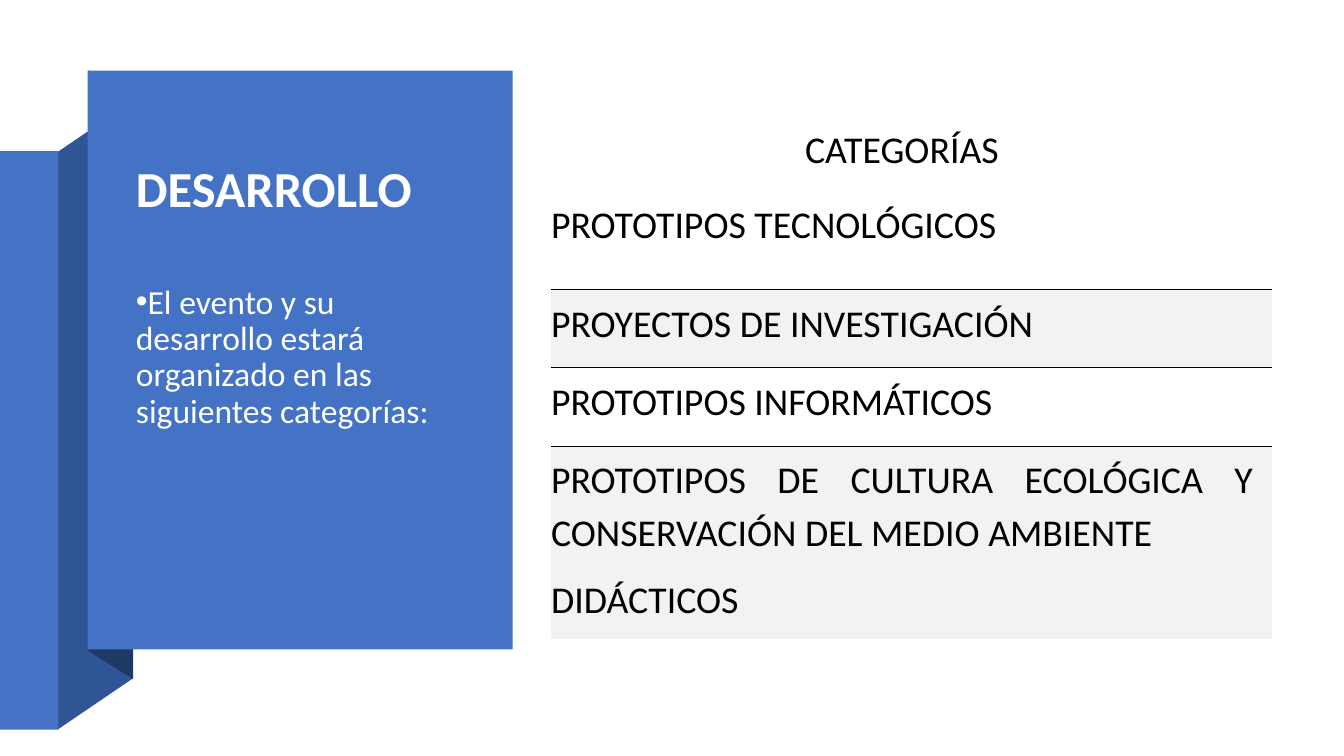
import lxml.etree
import pptx
import pptx.dml.color
import pptx.enum.shapes
import pptx.enum.text
import pptx.oxml
import pptx.oxml.ns
import pptx.util

Pt = pptx.util.Pt
ALIGN = pptx.enum.text.PP_ALIGN
ANCHOR = pptx.enum.text.MSO_ANCHOR
NO_STYLE = "{2D5ABB26-0587-4C30-8999-92F81FD0307C}"
COLORS = {
    "blue": "4472C4",
    "side": "2F5597",
    "fold": "203864",
    "band": "F2F2F2",
    "white": "FFFFFF",
    "body": "FEFFFF",
    "black": "000000",
}
CATEGORIES = [
    (54.7, ["CATEGORÍAS"]),
    (70.6, ["PROTOTIPOS TECNOLÓGICOS"]),
    (56, ["PROYECTOS DE INVESTIGACIÓN"]),
    (56, ["PROTOTIPOS INFORMÁTICOS"]),
    (131, ["PROTOTIPOS DE CULTURA ECOLÓGICA Y CONSERVACIÓN DEL MEDIO AMBIENTE",
           "DIDÁCTICOS"]),
]


def rgb(name):
    """Return the named colour."""
    return pptx.dml.color.RGBColor.from_string(COLORS[name])


def apply(target, values):
    """Set every attribute in values on the target."""
    for name, value in values.items():
        setattr(target, name, value)


def paint(shape, color):
    """Give a shape a flat fill with no line or shadow."""
    shape.shadow.inherit = False
    shape.fill.solid()
    shape.fill.fore_color.rgb = rgb(color)
    shape.line.fill.background()


def add_panel(page, left, top, width, height, color):
    """Draw a flat rectangle."""
    kind = pptx.enum.shapes.MSO_SHAPE.RECTANGLE
    paint(page.shapes.add_shape(kind, Pt(left), Pt(top), Pt(width), Pt(height)), color)


def add_fold(page, corners, color):
    """Draw a closed ribbon side through the corners."""
    points = [(Pt(x), Pt(y)) for x, y in corners]
    builder = page.shapes.build_freeform(*points[0], scale=1.0)
    builder.add_line_segments(points[1:], close=True)
    paint(builder.convert_to_shape(), color)


def write(para, text, color, font, layout):
    """Fill a paragraph with one formatted span."""
    apply(para, layout)
    span = para.add_run()
    span.text = text
    apply(span.font, {"name": "Calibri", **font})
    span.font.color.rgb = rgb(color)


def add_text(page, left, top, width, height, anchor):
    """Add a wrapping text box and return its first paragraph."""
    box = page.shapes.add_textbox(Pt(left), Pt(top), Pt(width), Pt(height))
    apply(box.text_frame, {"word_wrap": True, "vertical_anchor": anchor})
    return box.text_frame.paragraphs[0]


def add_bullet(para):
    """Give a paragraph a hanging round bullet."""
    properties = para._p.get_or_add_pPr()
    properties.set("marL", "0")
    properties.set("indent", str(Pt(-18)))
    for tag, key, value in (("a:buFont", "typeface", "Arial"), ("a:buChar", "char", "•")):
        bullet = lxml.etree.SubElement(properties, pptx.oxml.ns.qn(tag))
        bullet.set(key, value)


def add_rule(cell, side):
    """Draw a thin black border on one side of a cell."""
    rule = pptx.oxml.parse_xml(
        f'<a:{side} {pptx.oxml.ns.nsdecls("a")} w="{Pt(0.75)}"><a:solidFill>'
        f'<a:srgbClr val="{COLORS["black"]}"/></a:solidFill></a:{side}>')
    cell._tc.get_or_add_tcPr().insert(0, rule)


def fill_cell(cell, texts, number):
    """Write one category row with its band and border."""
    heading = number == 0
    banded = number in (2, 4)
    apply(cell, {
        "margin_left": 0,
        "margin_right": Pt(13.7),
        "margin_top": Pt(2 if heading else 3.6),
        "margin_bottom": Pt(12),
        "vertical_anchor": ANCHOR.BOTTOM if heading else ANCHOR.TOP,
    })
    layout = {
        "alignment": ALIGN.CENTER if heading else ALIGN.JUSTIFY,
        "line_spacing": 1.15,
        "space_after": Pt(10),
    }
    for index, text in enumerate(texts):
        frame = cell.text_frame
        para = frame.add_paragraph() if index else frame.paragraphs[0]
        write(para, text, "black", {"size": Pt(27)}, layout)
    if banded:
        cell.fill.solid()
        cell.fill.fore_color.rgb = rgb("band")
        add_rule(cell, "lnT")
    else:
        cell.fill.background()
        if not heading:
            add_rule(cell, "lnB")


def add_categories(page):
    """Add the one-column table of categories."""
    total = sum(height for height, _ in CATEGORIES)
    frame = page.shapes.add_table(
        len(CATEGORIES), 1, Pt(393.6), Pt(81.4), Pt(515), Pt(total))
    table = frame.table
    apply(table, {"first_row": False, "horz_banding": False})
    table._tbl.tblPr.find(pptx.oxml.ns.qn("a:tableStyleId")).text = NO_STYLE
    for number, (height, texts) in enumerate(CATEGORIES):
        table.rows[number].height = Pt(height)
        fill_cell(table.cell(number, 0), texts, number)


def main():
    """Build and save the slide."""
    deck = pptx.Presentation()
    apply(deck, {"slide_width": Pt(960), "slide_height": Pt(540)})
    page = deck.slides.add_slide(deck.slide_layouts[6])
    add_fold(page, [(41, 521.3), (95, 484.6), (95, 72), (41, 108.7)], "side")
    add_panel(page, 0, 108, 41.8, 413.3, "blue")
    add_fold(page, [(63, 465), (95, 485), (95, 71), (63, 50.4)], "fold")
    add_panel(page, 62.6, 50.4, 303.6, 413.5, "blue")
    title = add_text(page, 90, 78.5, 250.6, 116, ANCHOR.MIDDLE)
    write(title, "DESARROLLO", "white", {"size": Pt(36), "bold": True},
          {"line_spacing": 0.9})
    body = add_text(page, 90, 200.2, 252, 235.4, ANCHOR.TOP)
    write(body, "El evento y su desarrollo estará organizado en las siguientes categorías:",
          "body", {"size": Pt(24)}, {"line_spacing": 0.9, "space_after": Pt(6)})
    add_bullet(body)
    add_categories(page)
    deck.save("out.pptx")


if __name__ == "__main__":
    main()
